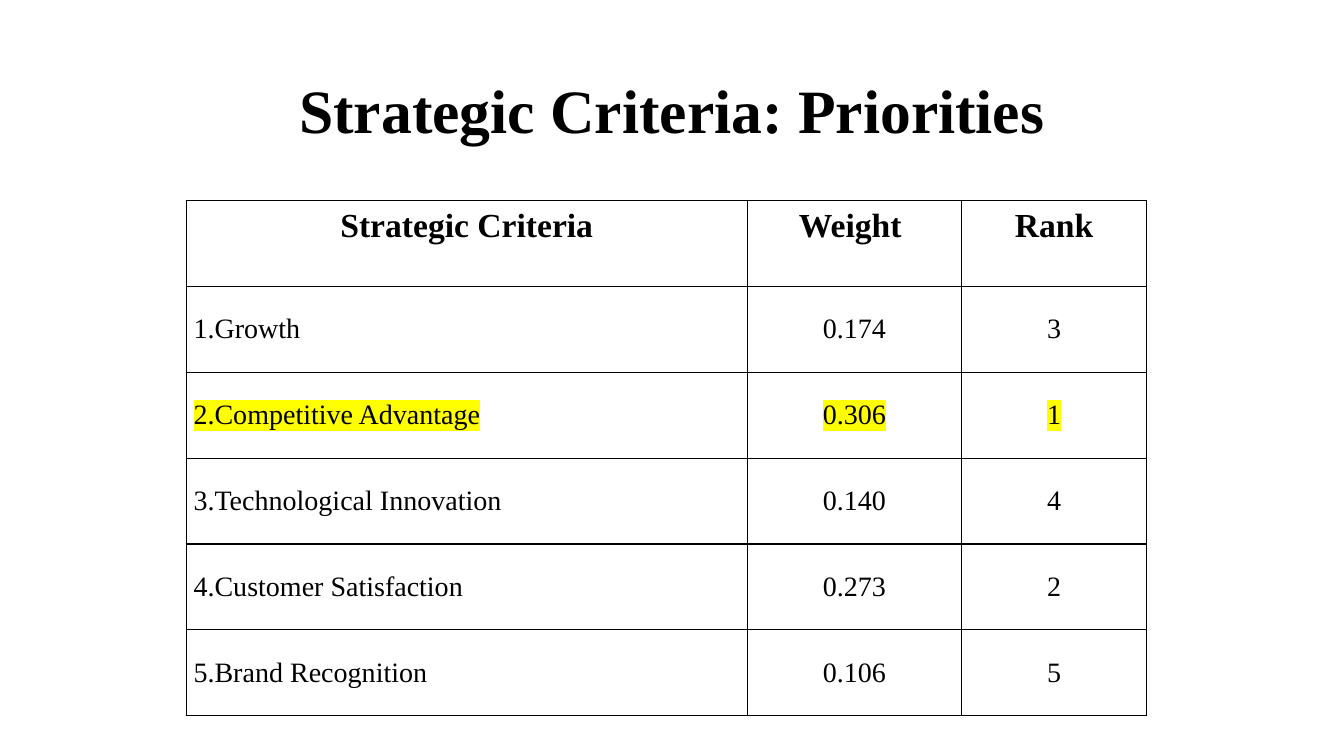
from lxml.etree import SubElement
from pptx import Presentation
from pptx.dml.color import RGBColor
from pptx.enum.text import MSO_ANCHOR, PP_ALIGN
from pptx.oxml import parse_xml
from pptx.oxml.ns import qn
from pptx.util import Inches, Pt

COLORS = {"text": "000000", "border": "000000", "highlight": "FFFF00"}
FONT = "Times New Roman"
DRAWING = 'xmlns:a="http://schemas.openxmlformats.org/drawingml/2006/main"'
HEADERS = ["Strategic Criteria", "Weight ", "Rank"]
CRITERIA = [
    ("Growth", "0.174", "3"),
    ("Competitive Advantage", "0.306", "1"),
    ("Technological Innovation", "0.140", "4"),
    ("Customer Satisfaction", "0.273", "2"),
    ("Brand Recognition", "0.106", "5"),
]
COLUMN_SHARES = [5.56, 2.13, 1.83]
TOP_RANK = "1"


def style_paragraph(para, size, bold, align):
    para.alignment = align
    para.font.name = FONT
    para.font.size = Pt(size)
    para.font.bold = bold
    para.font.color.rgb = RGBColor.from_string(COLORS["text"])


def number_paragraph(para, number):
    properties = para._p.get_or_add_pPr()
    properties.set("marL", "0")
    properties.set("indent", "0")
    properties.insert(0, parse_xml(
        f'<a:buAutoNum {DRAWING} type="arabicPeriod" startAt="{number}"/>'))


def highlight_span(span):
    highlight = SubElement(span._r.get_or_add_rPr(), qn("a:highlight"))
    SubElement(highlight, qn("a:srgbClr")).set("val", COLORS["highlight"])


def add_borders(cell):
    properties = cell._tc.get_or_add_tcPr()
    for position, side in enumerate(["lnL", "lnR", "lnT", "lnB"]):
        properties.insert(position, parse_xml(
            f'<a:{side} {DRAWING} w="{Pt(1)}"><a:solidFill>'
            f'<a:srgbClr val="{COLORS["border"]}"/></a:solidFill></a:{side}>'))


def fill_cell(cell, text, size, bold, align, anchor):
    cell.fill.background()
    add_borders(cell)
    cell.margin_left = cell.margin_right = Inches(0.07)
    cell.margin_top = cell.margin_bottom = Inches(0.07)
    cell.vertical_anchor = anchor
    para = cell.text_frame.paragraphs[0]
    span = para.add_run()
    span.text = text
    style_paragraph(para, size, bold, align)
    return para, span


def add_title(page, left, top, width, height):
    box = page.shapes.add_textbox(
        Inches(left), Inches(top), Inches(width), Inches(height))
    frame = box.text_frame
    frame.word_wrap = True
    frame.vertical_anchor = MSO_ANCHOR.MIDDLE
    para = frame.paragraphs[0]
    para.text = "Strategic Criteria: Priorities"
    para.line_spacing = 0.9
    style_paragraph(para, 44, True, PP_ALIGN.CENTER)


def add_priorities(page, left, top, width, height):
    row_count = len(CRITERIA) + 1
    table = page.shapes.add_table(
        row_count, len(HEADERS),
        Inches(left), Inches(top), Inches(width), Inches(height)).table
    table.first_row = False
    table.horz_banding = False
    for column, share in zip(table.columns, COLUMN_SHARES):
        column.width = Inches(width * share / sum(COLUMN_SHARES))
    for row in table.rows:
        row.height = Inches(height / row_count)

    for index, header in enumerate(HEADERS):
        fill_cell(table.cell(0, index), header, 24, True,
                  PP_ALIGN.CENTER, MSO_ANCHOR.TOP)
    for number, criterion in enumerate(CRITERIA, start=1):
        for index, text in enumerate(criterion):
            align = PP_ALIGN.CENTER if index else PP_ALIGN.LEFT
            para, span = fill_cell(table.cell(number, index), text, 20, False,
                                   align, MSO_ANCHOR.MIDDLE)
            if index == 0:
                number_paragraph(para, number)
            if criterion[-1] == TOP_RANK:
                highlight_span(span)


def main():
    deck = Presentation()
    deck.slide_width = Inches(13.33)
    deck.slide_height = Inches(7.5)
    page = deck.slides.add_slide(deck.slide_layouts[6])
    add_title(page, 0.92, 0.4, 11.5, 1.45)
    add_priorities(page, 1.85, 1.99, 9.52, 5.11)
    deck.save("out.pptx")


if __name__ == "__main__":
    main()
